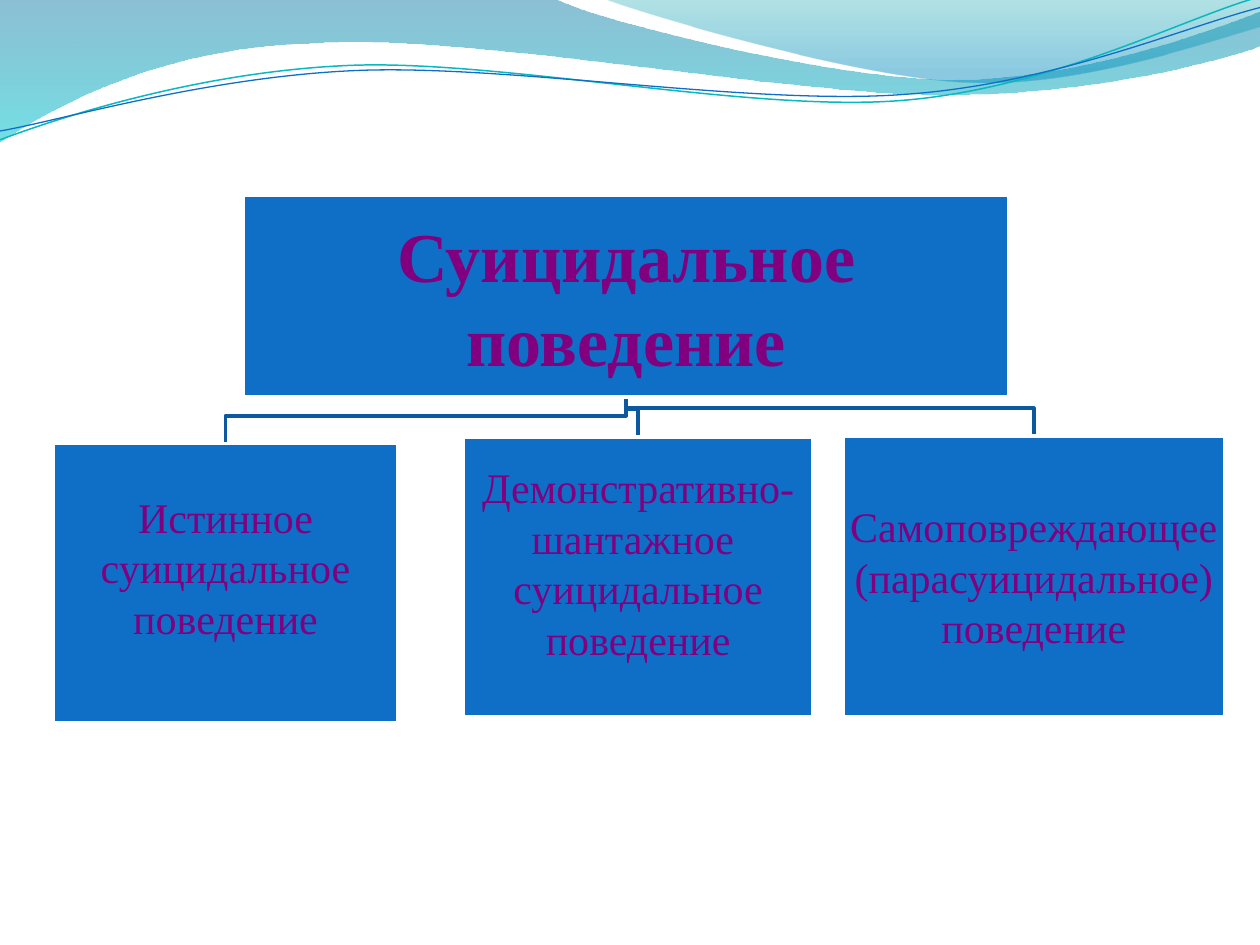
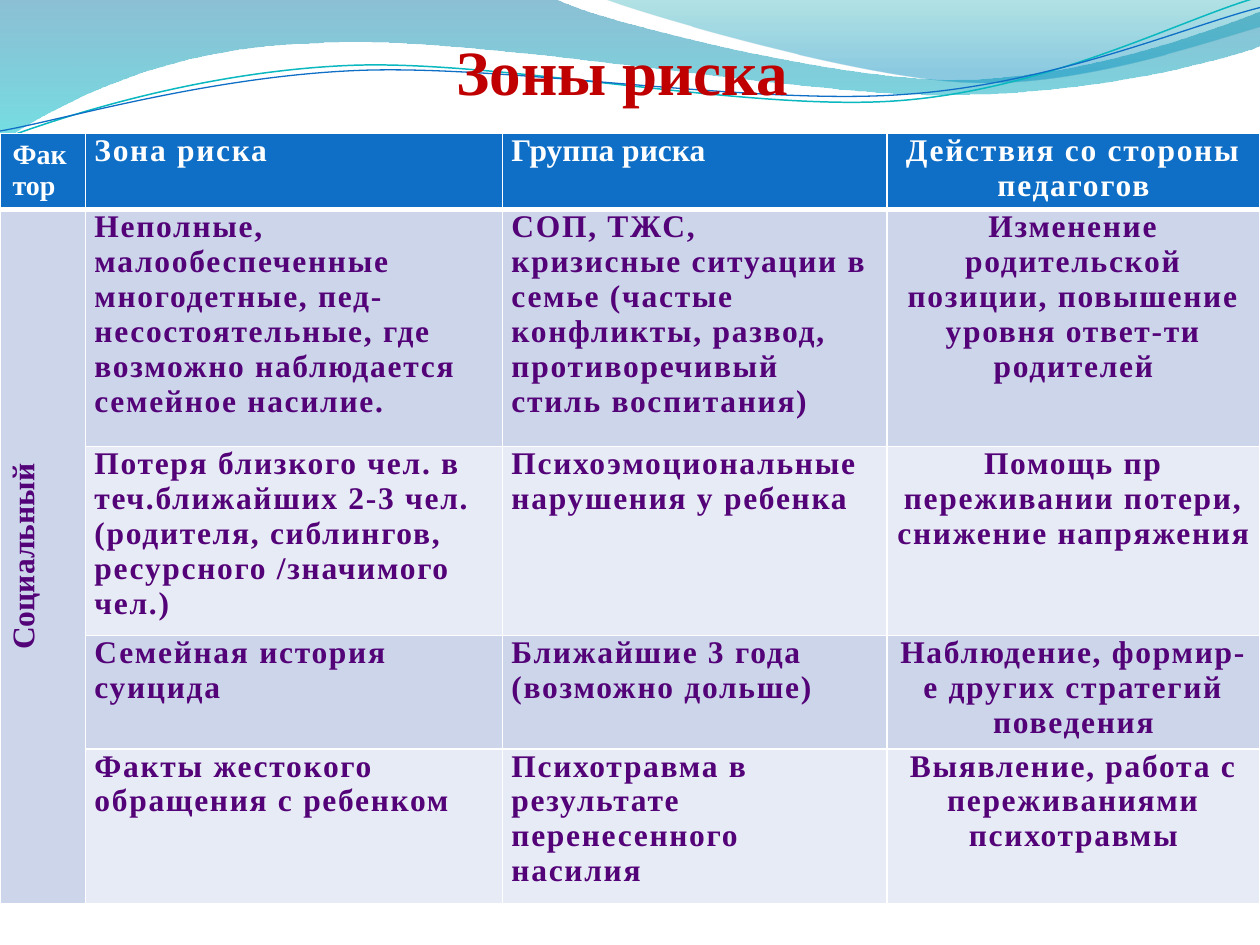
"""Build two slides on risk behaviour: a tree of kinds and a table of risk zones."""
from dataclasses import dataclass

from lxml import etree
from pptx import Presentation
from pptx.dml.color import RGBColor
from pptx.enum.shapes import MSO_SHAPE
from pptx.enum.text import MSO_ANCHOR, PP_ALIGN
from pptx.oxml.ns import qn
from pptx.util import Inches, Pt

RECT = MSO_SHAPE.RECTANGLE
MIDDLE, BOTTOM = MSO_ANCHOR.MIDDLE, MSO_ANCHOR.BOTTOM
LEFT, CENTER = PP_ALIGN.LEFT, PP_ALIGN.CENTER
FACE = "Times New Roman"
HEX = {
    "white": "FFFFFF", "blue": "0F6FC6", "navy": "0C599F", "teal": "0AB8BF",
    "plum": "800080", "red": "C00000", "grape": "530278",
    "odd": "CCD5EA", "even": "E7EBF5",
    "deep": "0074A1", "aqua": "00C6CF", "sea": "00A1A9", "sky": "008BBF",
}


@dataclass(frozen=True)
class Stop:
    place: float
    color: str
    alpha: int


@dataclass(frozen=True)
class Wave:
    start: tuple
    steps: list
    stops: tuple = ()
    color: str = ""
    width: float = 0


@dataclass(frozen=True)
class Node:
    left: float
    top: float
    width: float
    height: float
    lines: tuple
    size: int = 24
    bold: bool = False
    foot: float = 0.02

    @property
    def mid(self) -> float:
        return self.left + self.width / 2


WAVES = [
    Wave((0, 0), [
        (4.4, -0.01),
        (4.76, 0.17, 6.64, 0.63, 7.58, 0.63),
        (8.53, 0.63, 9.58, 0.26, 10, 0.09),
        (10.01, 0.36),
        (9.83, 0.44, 8.7, 0.76, 7.46, 0.75),
        (6.22, 0.75, 3.82, 0.28, 2.57, 0.34),
        (1.29, 0.36, 0.46, 0.83, -0.01, 1.13),
    ], stops=(Stop(0, "deep", 45), Stop(1, "aqua", 55))),
    Wave((4.79, -0.01), [
        (5.09, 0.11, 6.82, 0.62, 7.69, 0.65),
        (8.56, 0.69, 9.61, 0.32, 10, 0.21),
        (10, 0),
    ], stops=(Stop(0, "sea", 30), Stop(0.8, "sky", 45))),
    Wave((0, 1.11), [
        (0.48, 0.93, 1.58, 0.57, 2.77, 0.52),
        (3.95, 0.47, 5.93, 0.89, 7.13, 0.8),
        (8.33, 0.71, 9.38, 0.15, 9.98, -0.02),
    ], color="teal", width=0.85),
    Wave((0, 1.04), [
        (0.47, 0.96, 1.64, 0.61, 2.83, 0.56),
        (4.03, 0.51, 5.97, 0.84, 7.17, 0.75),
        (8.36, 0.67, 9.41, 0.21, 10, 0.06),
    ], color="blue", width=0.75),
]

ROOT = Node(1.93, 1.55, 6.08, 1.6, ("Суицидальное", "поведение"), 40, True)
KINDS = [
    Node(6.69, 3.46, 3.03, 2.23,
         ("Самоповреждающее", "(парасуицидальное)", "поведение")),
    Node(3.68, 3.47, 2.77, 2.22,
         ("Демонстративно-", "шантажное ", "суицидальное", "поведение"), foot=0.25),
    Node(0.42, 3.52, 2.74, 2.22,
         ("Истинное", "суицидальное", "поведение"), foot=0.28),
]
KNEE = 0.22

COLS = (0.68, 3.31, 3.05, 2.96)
ROWS = (0.59, 1.88, 1.39, 0.87, 1.23)
ZONES = [
    ("Фактор", "Зона риска", "Группа риска", "Действия со стороны педагогов"),
    ("Социальный",
     "Неполные, малообеспеченные многодетные, пед- несостоятельные, "
     "где возможно наблюдается семейное насилие.",
     "СОП, ТЖС, кризисные ситуации в семье (частые конфликты, развод, "
     "противоречивый стиль воспитания)",
     "Изменение родительской позиции, повышение уровня ответ-ти родителей"),
    ("",
     "Потеря близкого чел. в теч.ближайших 2-3 чел. "
     "(родителя, сиблингов, ресурсного /значимого чел.)",
     "Психоэмоциональные нарушения у ребенка",
     "Помощь пр переживании потери, снижение напряжения"),
    ("",
     "Семейная история суицида",
     "Ближайшие 3 года (возможно дольше)",
     "Наблюдение, формир-е других стратегий поведения"),
    ("",
     "Факты жестокого обращения с ребенком",
     "Психотравма в результате перенесенного насилия",
     "Выявление, работа с переживаниями психотравмы"),
]


def rgb(name: str) -> RGBColor:
    return RGBColor.from_string(HEX[name])


def style(para, size: float, color: str, bold: bool = False, align=CENTER) -> None:
    para.alignment = align
    font = para.font
    font.name, font.size, font.bold = FACE, Pt(size), bold
    font.color.rgb = rgb(color)


def pad(frame, left: float, top: float, right: float, low: float) -> None:
    frame.margin_left, frame.margin_top = Inches(left), Inches(top)
    frame.margin_right, frame.margin_bottom = Inches(right), Inches(low)


def bend(shape, steps: list) -> None:
    """Turn each run of three segments of a curved step into one Bezier curve."""
    parts = iter(list(shape.element.iter(qn("a:lnTo"))))
    for step in steps:
        trio = [next(parts) for _ in range(len(step) // 2)]
        if len(trio) == 3:
            curve = etree.Element(qn("a:cubicBezTo"))
            trio[0].addprevious(curve)
            for part in trio:
                curve.append(part[0])
                part.getparent().remove(part)


def shade(shape, stops: tuple) -> None:
    shape.fill.gradient()
    shape.fill.gradient_angle = 270
    for slot, stop in zip(shape.fill.gradient_stops, stops):
        slot.position = stop.place
        slot.color.rgb = rgb(stop.color)
    for tint, stop in zip(shape.element.spPr.iter(qn("a:srgbClr")), stops):
        etree.SubElement(tint, qn("a:alpha"), val=str(stop.alpha * 1000))


def draw(slide, wave: Wave) -> None:
    pairs = [(Inches(x), Inches(y)) for step in wave.steps
             for x, y in zip(step[::2], step[1::2])]
    left, top = wave.start
    pen = slide.shapes.build_freeform(Inches(left), Inches(top))
    pen.add_line_segments(pairs, close=bool(wave.stops))
    shape = pen.convert_to_shape()
    shape.shadow.inherit = False
    bend(shape, wave.steps)
    if wave.stops:
        shade(shape, wave.stops)
        shape.line.fill.background()
    else:
        shape.fill.background()
        shape.line.color.rgb = rgb(wave.color)
        shape.line.width = Pt(wave.width)


def add_page(deck):
    slide = deck.slides.add_slide(deck.slide_layouts[6])
    for wave in WAVES:
        draw(slide, wave)
    return slide


def add_node(slide, node: Node) -> None:
    box = slide.shapes.add_shape(RECT, Inches(node.left), Inches(node.top),
                                 Inches(node.width), Inches(node.height))
    box.shadow.inherit = False
    box.fill.solid()
    box.fill.fore_color.rgb = rgb("blue")
    box.line.color.rgb = rgb("white")
    box.line.width = Pt(2)
    frame = box.text_frame
    frame.vertical_anchor = MIDDLE
    pad(frame, 0.02, 0.02, 0.02, node.foot)
    frame.text = "\n".join(node.lines)
    for para in frame.paragraphs:
        style(para, node.size, "plum", node.bold)


def add_tree(slide) -> None:
    base = ROOT.top + ROOT.height
    for kid in KINDS:
        knee = kid.top - KNEE
        steps = [(ROOT.mid, knee), (kid.mid, knee), (kid.mid, kid.top)]
        draw(slide, Wave((ROOT.mid, base), steps, color="navy", width=2))
    for node in (ROOT, *KINDS):
        add_node(slide, node)


def add_title(slide, text: str) -> None:
    frame = slide.shapes.add_textbox(0, 0, Inches(10), Inches(0.86)).text_frame
    frame.word_wrap = True
    frame.vertical_anchor = BOTTOM
    pad(frame, 0, 0.05, 0.12, 0)
    frame.text = text
    style(frame.paragraphs[0], 36, "red", True)


def edge(cell, low: float) -> None:
    props = cell._tc.get_or_add_tcPr()
    for side, width in (("L", 1), ("R", 1), ("T", 1), ("B", low)):
        line = etree.SubElement(props, qn(f"a:ln{side}"), w=str(Pt(width)))
        fill = etree.SubElement(line, qn("a:solidFill"))
        etree.SubElement(fill, qn("a:srgbClr"), val=HEX["white"])


def fill_cell(cell, row: int, col: int, text: str) -> None:
    head = row == 0
    edge(cell, 3 if head else 1)
    cell.fill.solid()
    tone = "blue" if head else "odd" if row % 2 or col == 0 else "even"
    cell.fill.fore_color.rgb = rgb(tone)
    if col:
        pad(cell, 0.07, 0, 0.1 if col == 2 else 0.07, 0)
    elif head:
        pad(cell, 0.1, 0.05, 0.1, 0.02)
    else:
        cell._tc.get_or_add_tcPr().set("vert", "vert270")
    if not text:
        return
    cell.text = text
    para = cell.text_frame.paragraphs[0]
    mid = col == 3 or (col == 0 and not head)
    style(para, 16 if head and col == 0 else 18, "white" if head else "grape",
          True, CENTER if mid else LEFT)
    if col and (row, col) != (0, 2):
        para._p.pPr.find(qn("a:defRPr")).set("spc", "100")


def add_zones(slide) -> None:
    grid = slide.shapes.add_table(len(ROWS), len(COLS), 0, Inches(1.06),
                                  Inches(sum(COLS)), Inches(sum(ROWS))).table
    for col, width in zip(grid.columns, COLS):
        col.width = Inches(width)
    for row, height in zip(grid.rows, ROWS):
        row.height = Inches(height)
    grid.cell(1, 0).merge(grid.cell(len(ROWS) - 1, 0))
    for row, texts in enumerate(ZONES):
        for col, text in enumerate(texts):
            fill_cell(grid.cell(row, col), row, col, text)


def main() -> None:
    deck = Presentation()
    deck.slide_width, deck.slide_height = Inches(10), Inches(7.5)
    add_tree(add_page(deck))
    page = add_page(deck)
    add_title(page, "Зоны риска")
    add_zones(page)
    deck.save("out.pptx")


if __name__ == "__main__":
    main()
